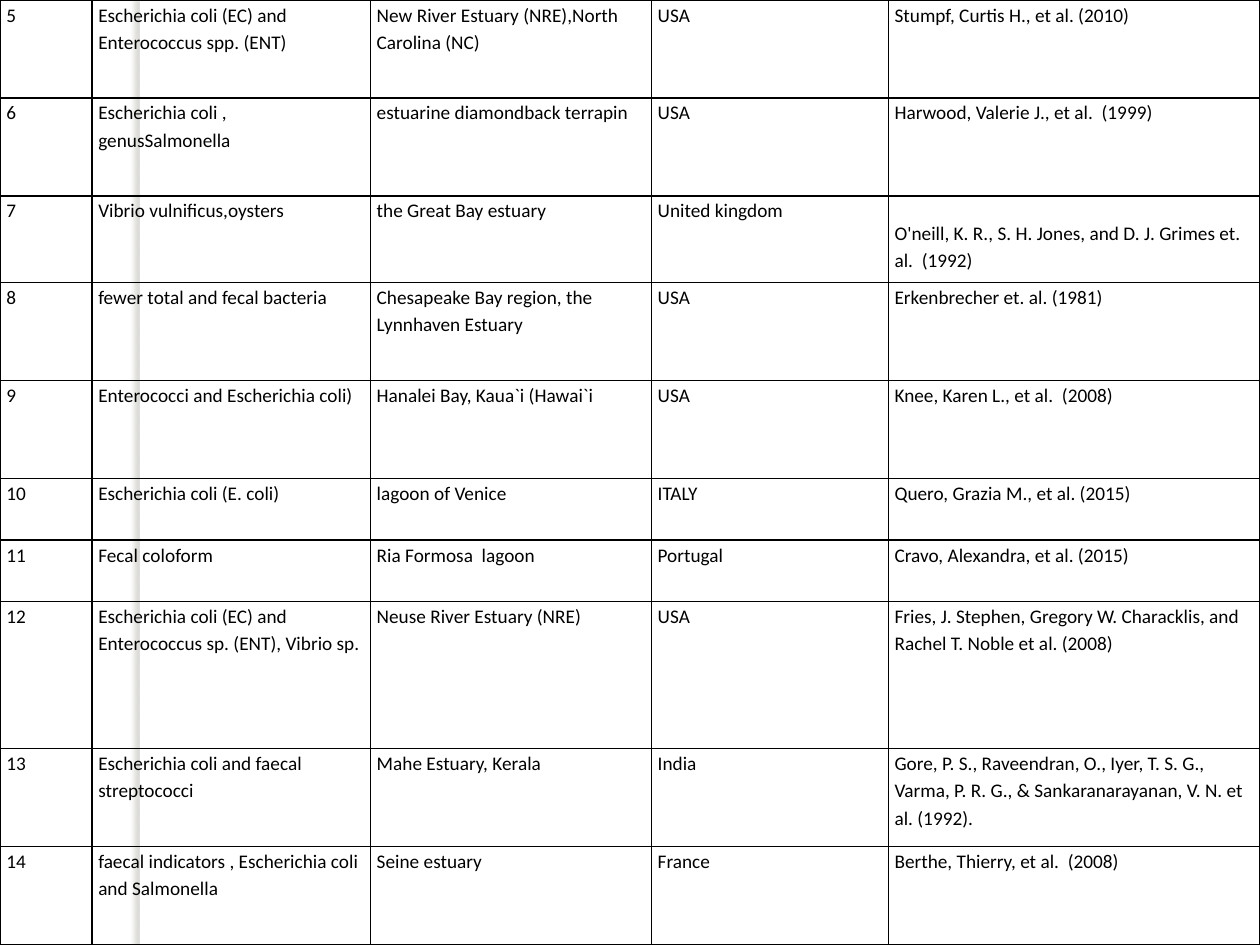
import lxml.etree
import pptx
import pptx.dml.color
import pptx.enum.shapes
import pptx.oxml
import pptx.oxml.ns
import pptx.util
from pptx.util import Inches

COLORS = {"ink": "000000", "paper": "FFFFFF", "shadow": "736F63"}
NAMESPACE = pptx.oxml.ns.nsdecls("a")
SLIDE_WIDTH, SLIDE_HEIGHT = 10, 7.5

column_widths = [0.73, 2.21, 2.23, 1.88, 2.95]
studies = [
    (0.78, "Escherichia coli (EC) and Enterococcus spp. (ENT)",
     "New River Estuary (NRE),North Carolina (NC)", "USA", "Stumpf, Curtis H., et al. (2010)"),
    (0.78, "Escherichia coli ,  genusSalmonella",
     "estuarine diamondback terrapin", "USA", "Harwood, Valerie J., et al.  (1999)"),
    (0.69, "Vibrio vulnificus,oysters",
     "the Great Bay estuary", "United kingdom",
     "O'neill, K. R., S. H. Jones, and D. J. Grimes et. al.  (1992)"),
    (0.78, "fewer total and fecal bacteria",
     "Chesapeake Bay region, the Lynnhaven Estuary", "USA", "Erkenbrecher et. al. (1981)"),
    (0.78, "Enterococci and Escherichia coli)",
     "Hanalei Bay, Kaua`i (Hawai`i", "USA", "Knee, Karen L., et al.  (2008)"),
    (0.49, "Escherichia coli (E. coli)",
     "lagoon of Venice", "ITALY", "Quero, Grazia M., et al. (2015)"),
    (0.49, "Fecal coloform",
     "Ria Formosa  lagoon", "Portugal", "Cravo, Alexandra, et al. (2015)"),
    (1.17, "Escherichia coli (EC) and Enterococcus sp. (ENT), Vibrio sp.",
     "Neuse River Estuary (NRE)", "USA",
     "Fries, J. Stephen, Gregory W. Characklis, and Rachel T. Noble et al. (2008)"),
    (0.78, "Escherichia coli and faecal streptococci",
     "Mahe Estuary, Kerala", "India",
     "Gore, P. S., Raveendran, O., Iyer, T. S. G., Varma, P. R. G., "
     "& Sankaranarayanan, V. N. et al. (1992)."),
    (0.78, "faecal indicators , Escherichia coli and Salmonella",
     "Seine estuary", "France", "Berthe, Thierry, et al.  (2008)"),
]
FIRST_NUMBER = 5
LOWERED_CELL = (2, 4)


def write_text(cell, text, size=11, font="Calibri", color="ink", spacing=1.15, top=0):
    cell.margin_left = cell.margin_right = Inches(0.05)
    cell.margin_top, cell.margin_bottom = Inches(top), 0
    para = cell.text_frame.paragraphs[0]
    para.line_spacing = spacing
    span = para.add_run()
    span.text = text
    span.font.size = pptx.util.Pt(size)
    span.font.name = font
    span.font.color.rgb = pptx.dml.color.RGBColor.from_string(COLORS[color])


def draw_borders(cell, color="ink", width=1):
    properties = cell._tc.get_or_add_tcPr()
    for position, side in enumerate(("lnL", "lnR", "lnT", "lnB")):
        properties.insert(position, pptx.oxml.parse_xml(
            f'<a:{side} {NAMESPACE} w="{pptx.util.Pt(width)}"><a:solidFill>'
            f'<a:srgbClr val="{COLORS[color]}"/></a:solidFill></a:{side}>'))


deck = pptx.Presentation()
deck.slide_width, deck.slide_height = Inches(SLIDE_WIDTH), Inches(SLIDE_HEIGHT)
page = deck.slides.add_slide(deck.slide_layouts[6])

strip = page.shapes.add_shape(pptx.enum.shapes.MSO_SHAPE.RECTANGLE,
                              Inches(1.11), 0, Inches(0.08), Inches(SLIDE_HEIGHT))
strip.fill.solid()
strip.fill.fore_color.rgb = pptx.dml.color.RGBColor.from_string(COLORS["paper"])
strip.line.fill.background()
strip.shadow.inherit = False
effects = strip._element.spPr.find(pptx.oxml.ns.qn("a:effectLst"))
effects.append(pptx.oxml.parse_xml(
    f'<a:outerShdw {NAMESPACE} blurRad="{pptx.util.Pt(3)}" dist="{pptx.util.Pt(3)}" '
    f'dir="{180 * 60000}" algn="tl" rotWithShape="0"><a:srgbClr val="{COLORS["shadow"]}">'
    '<a:alpha val="25000"/></a:srgbClr></a:outerShdw>'))

table = page.shapes.add_table(len(studies), len(column_widths), 0, 0,
                              Inches(SLIDE_WIDTH), Inches(SLIDE_HEIGHT)).table
table.first_row = table.horz_banding = False
for column, width in zip(table.columns, column_widths):
    column.width = Inches(width)

height_scale = SLIDE_HEIGHT / sum(study[0] for study in studies)
for row_index, (height, *details) in enumerate(studies):
    table.rows[row_index].height = Inches(height * height_scale)
    for column_index, text in enumerate([str(FIRST_NUMBER + row_index), *details]):
        cell = table.cell(row_index, column_index)
        cell.fill.background()
        lowered = (row_index, column_index) == LOWERED_CELL
        write_text(cell, text, top=0.18 if lowered else 0)
        draw_borders(cell)

deck.save("out.pptx")
